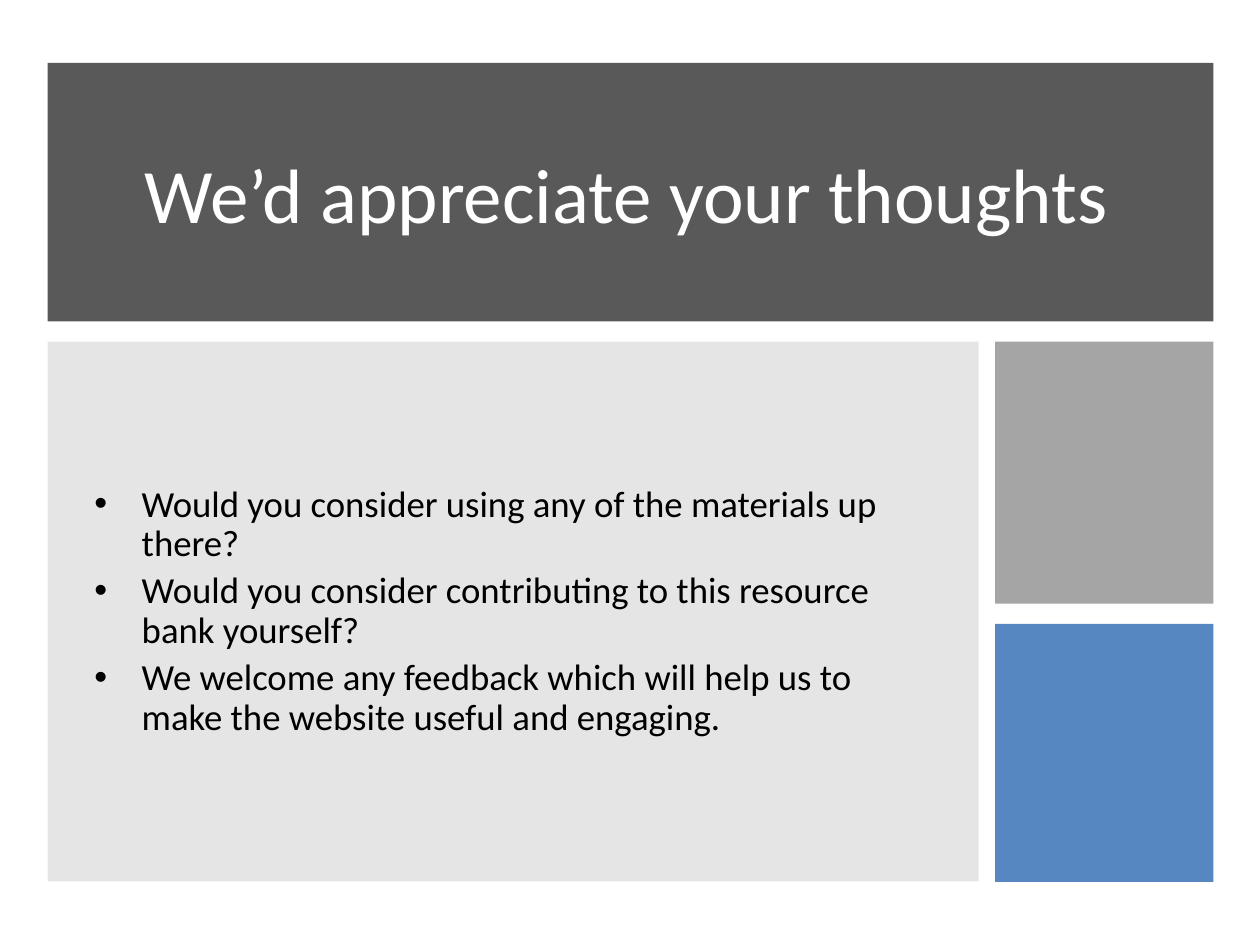
"""Build a feedback slide with a title band, a bullet panel and two tiles."""
from lxml.etree import SubElement
from pptx import Presentation
from pptx.dml.color import RGBColor
from pptx.enum.shapes import MSO_SHAPE
from pptx.enum.text import MSO_ANCHOR, MSO_AUTO_SIZE, PP_ALIGN
from pptx.oxml.ns import qn
from pptx.util import Cm, Pt


def paint(fill, color, alpha=100):
    fill.solid()
    fill.fore_color.rgb = RGBColor.from_string(color)
    if alpha < 100:
        node = fill._xPr.find(qn("a:solidFill"))[0]
        SubElement(node, qn("a:alpha"), val=str(alpha * 1000))


def write(holder, lines, box, size, color, align):
    holder.left, holder.top, holder.width, holder.height = map(Cm, box)
    frame = holder.text_frame
    frame.text = "\n".join(lines)
    frame.word_wrap = True
    frame.auto_size = MSO_AUTO_SIZE.NONE
    frame.vertical_anchor = MSO_ANCHOR.MIDDLE
    for para in frame.paragraphs:
        para.alignment = align
        para.line_spacing = 0.9
        font = para.runs[0].font
        font.name, font.size = "Calibri", Pt(size)
        paint(font.fill, color)


deck = Presentation()
deck.slide_width, deck.slide_height = Cm(25.4), Cm(19.05)
slide = deck.slides.add_slide(deck.slide_layouts[1])
title, body = slide.placeholders

panels = [
    (0.96, 1.27, 23.5, 5.21, "595959", 100),
    (0.96, 6.89, 18.77, 10.88, "808080", 20),
    (20.06, 6.89, 4.4, 5.28, "A5A5A5", 100),
    (20.06, 12.58, 4.4, 5.2, "4F81BD", 95),
]
for *box, color, alpha in panels:
    panel = slide.shapes.add_shape(MSO_SHAPE.RECTANGLE, *map(Cm, box))
    panel.shadow.inherit = False
    panel.line.fill.background()
    paint(panel.fill, color, alpha)

write(title, ["We’d appreciate your thoughts"], (1.52, 2.03, 22.23, 3.96),
      size=44, color="FFFFFF", align=PP_ALIGN.CENTER)
points = [
    "Would you consider using any of the materials up there?",
    "Would you consider contributing to this resource bank yourself?",
    "We welcome any feedback which will help us to make the website useful and engaging.",
]
write(body, points, (1.65, 7.75, 17.45, 9.17),
      size=21, color="000000", align=PP_ALIGN.LEFT)

tree = slide.shapes._spTree
for holder in (title, body):
    tree.append(holder._element)

deck.save("out.pptx")
